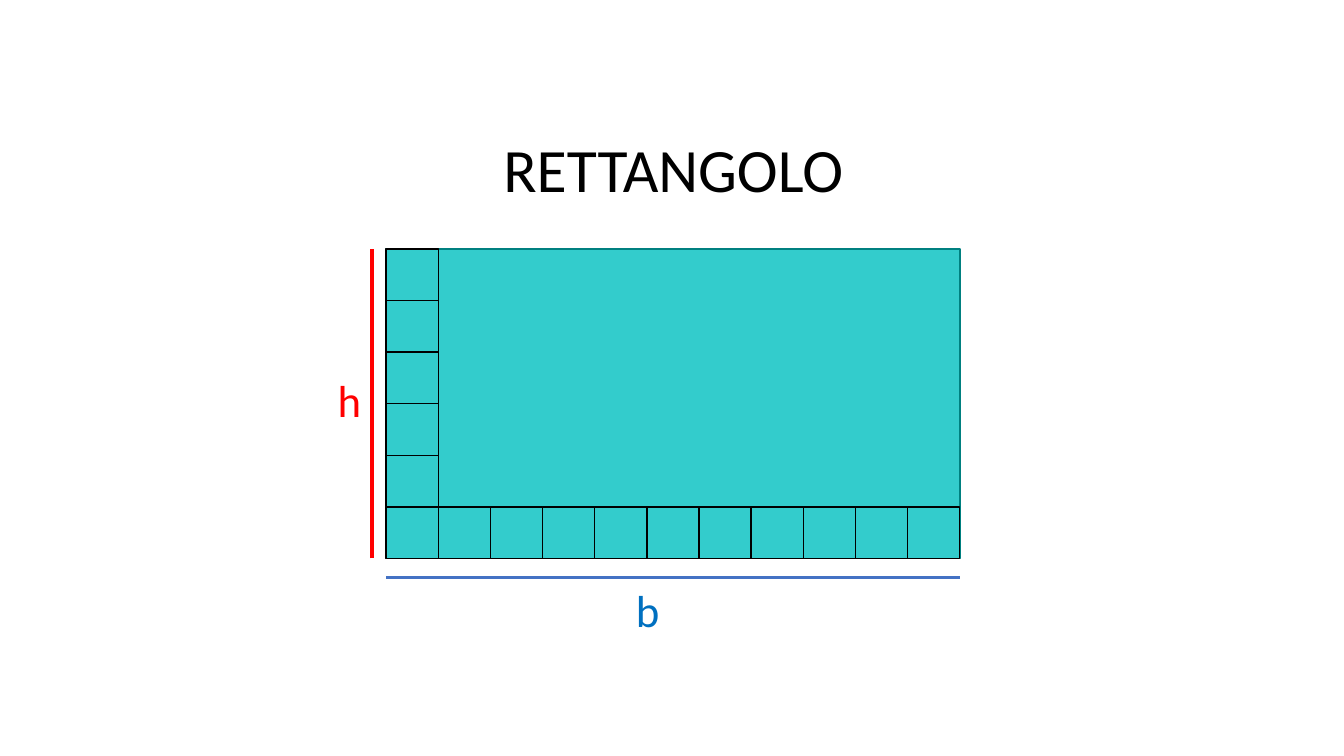
from lxml import etree
from pptx import Presentation
from pptx import util as u
from pptx.dml.color import RGBColor
from pptx.enum import shapes, text
from pptx.oxml import ns


def color(value):
    return RGBColor.from_string(value)


def write_text(frame, words, size=32, ink="000000", font="Calibri",
               align=text.PP_ALIGN.LEFT, spacing=1.0):
    para = frame.paragraphs[0]
    para.alignment = align
    para.line_spacing = spacing
    span = para.add_run()
    span.text = words
    span.font.name = font
    span.font.size = u.Pt(size)
    span.font.color.rgb = color(ink)


class Drawing:
    """Draws the elements of the rectangle slide in one shared style."""

    fill = "33CCCC"

    def __init__(self, page):
        self.page = page

    def rectangle(self, left, top, width, height, outline="000000"):
        box = self.page.shapes.add_shape(
            shapes.MSO_SHAPE.RECTANGLE, u.Inches(left), u.Inches(top),
            u.Inches(width), u.Inches(height))
        box.shadow.inherit = False
        box.fill.solid()
        box.fill.fore_color.rgb = color(self.fill)
        box.line.color.rgb = color(outline)
        box.line.width = u.Pt(1)

    def label(self, words, left, top, width, height, wrap=False,
              anchor=text.MSO_ANCHOR.TOP, **style):
        box = self.page.shapes.add_textbox(
            u.Inches(left), u.Inches(top), u.Inches(width), u.Inches(height))
        box.text_frame.word_wrap = wrap
        box.text_frame.vertical_anchor = anchor
        write_text(box.text_frame, words, **style)

    def measure(self, start, end, ink):
        line = self.page.shapes.add_connector(
            shapes.MSO_CONNECTOR.STRAIGHT,
            *(u.Inches(value) for value in (*start, *end)))
        line.line.color.rgb = color(ink)
        line.line.width = u.Pt(2.25)
        etree.SubElement(line._element.spPr, ns.qn("a:effectLst"))


def main():
    deck = Presentation()
    deck.slide_width = u.Inches(13.33)
    deck.slide_height = u.Inches(7.5)
    drawing = Drawing(deck.slides.add_slide(deck.slide_layouts[6]))

    left, top, width, height = 3.83, 2.47, 5.69, 3.07
    columns, rows = 11, 6
    cell_width, cell_height = width / columns, height / rows
    bottom = top + height

    drawing.label("RETTANGOLO", 0.93, 0.99, 11.5, 1.45, wrap=True,
                  anchor=text.MSO_ANCHOR.MIDDLE, size=44,
                  align=text.PP_ALIGN.CENTER, spacing=0.9)
    drawing.rectangle(left, top, width, height, outline="008080")

    base_cells = [(column, rows - 1) for column in range(columns)]
    height_cells = [(0, row) for row in reversed(range(rows - 1))]
    for column, row in base_cells + height_cells:
        drawing.rectangle(left + column * cell_width, top + row * cell_height,
                          cell_width, cell_height)

    drawing.measure((3.69, bottom), (3.69, top), "FF0000")
    drawing.label("h", 3.25, 3.65, 0.44, 0.64, ink="FF0000")
    drawing.measure((left, 5.73), (left + width, 5.73), "4472C4")
    drawing.label("b", 6.21, 5.73, 0.44, 0.64, ink="0070C0")

    deck.save("out.pptx")


if __name__ == "__main__":
    main()
